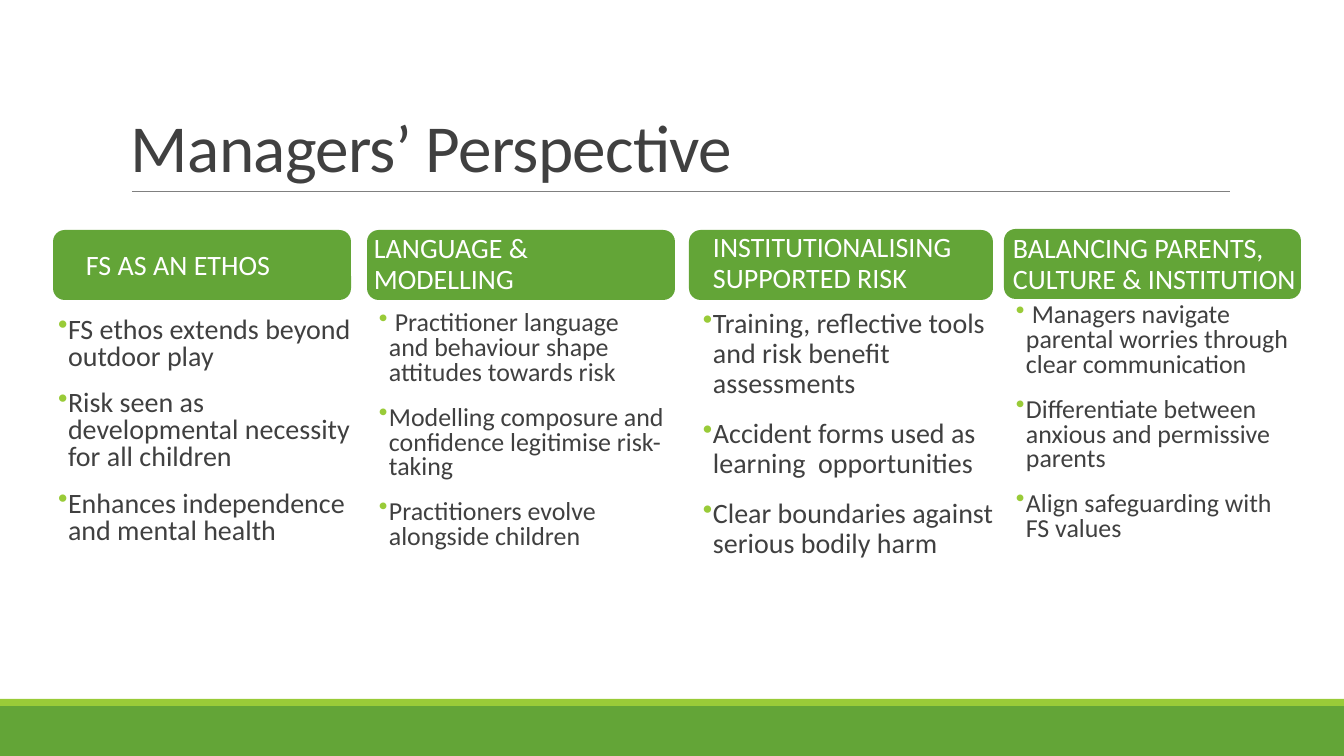
from dataclasses import dataclass
from typing import NamedTuple

from lxml.etree import SubElement
from pptx import Presentation
from pptx.dml.color import RGBColor
from pptx.enum.shapes import MSO_CONNECTOR as Connector, MSO_SHAPE as Shape
from pptx.enum.text import MSO_ANCHOR as Anchor
from pptx.oxml.ns import qn
from pptx.util import Emu, Pt

SLIDE_W, SLIDE_H = 1344, 756
EMU_PER_PX = 914400 / 100.8


def px(length: int) -> Emu:
    return Emu(round(length * EMU_PER_PX))


@dataclass(frozen=True)
class Theme:
    font: str = "Calibri"
    green: str = "63A537"
    lime: str = "99CB38"
    ink: str = "404040"
    rule: str = "808080"
    white: str = "FFFFFF"
    title_size: float = 48
    text_size: float = 20
    small_size: float = 18.5


THEME = Theme()


class Box(NamedTuple):
    left: int
    top: int
    width: int
    height: int

    def emu(self) -> list[Emu]:
        return [px(length) for length in self]


@dataclass(frozen=True)
class Column:
    heading: str
    band: Box
    heading_box: Box
    points_box: Box
    points: tuple[str, ...]
    size: float
    line_spacing: float


COLUMNS = (
    Column("FS AS AN ETHOS", Box(53, 230, 298, 70), Box(76, 225, 321, 82),
           Box(58, 313, 321, 239),
           ("FS ethos extends beyond outdoor play",
            "Risk seen as developmental necessity for all children",
            "Enhances independence and mental health"),
           THEME.text_size, 0.8),
    Column("LANGUAGE & MODELLING", Box(367, 230, 308, 70), Box(364, 224, 310, 82),
           Box(379, 307, 285, 254),
           (" Practitioner language and behaviour shape attitudes towards risk",
            "Modelling composure and confidence legitimise risk-taking",
            "Practitioners evolve alongside children"),
           THEME.small_size, 0.8),
    Column("INSTITUTIONALISING SUPPORTED RISK", Box(689, 230, 304, 70),
           Box(703, 223, 321, 82), Box(703, 304, 295, 263),
           ("Training, reflective tools and risk benefit assessments",
            "Accident forms used as learning  opportunities",
            "Clear boundaries against serious bodily harm"),
           THEME.text_size, 0.9),
    Column("BALANCING PARENTS, CULTURE & INSTITUTION", Box(1004, 229, 297, 70),
           Box(1003, 224, 321, 82), Box(1016, 299, 274, 288),
           (" Managers navigate parental worries through clear communication",
            "Differentiate between anxious and permissive parents",
            "Align safeguarding with FS values"),
           THEME.small_size, 0.8),
)


def apply_format(target, values: dict) -> None:
    for name, value in values.items():
        setattr(target, name, value)


def add_block(slide, kind: Shape, box: Box, color: str) -> None:
    block = slide.shapes.add_shape(kind, *box.emu())
    block.shadow.inherit = False
    block.fill.solid()
    block.fill.fore_color.rgb = RGBColor.from_string(color)
    block.line.fill.background()


def add_rule(slide, left: int, right: int, y: int) -> None:
    rule = slide.shapes.add_connector(
        Connector.STRAIGHT, px(left), px(y), px(right), px(y))
    rule.line.width = Pt(0.5)
    rule.line.color.rgb = RGBColor.from_string(THEME.rule)
    SubElement(rule._element.spPr, qn("a:effectLst"))


def add_bullet(paragraph) -> None:
    properties = paragraph._p.get_or_add_pPr()
    properties.set("marL", str(px(10)))
    properties.set("indent", str(-px(10)))
    bullet_color = SubElement(properties, qn("a:buClr"))
    SubElement(bullet_color, qn("a:srgbClr"), val=THEME.lime)
    SubElement(properties, qn("a:buChar"), char="•")


def add_text(slide, box: Box, lines: tuple[str, ...], size: float, color: str,
             line_spacing: float, anchor: Anchor, inset: int = 10,
             bulleted: bool = False, tracking: int = 0) -> None:
    frame = slide.shapes.add_textbox(*box.emu()).text_frame
    apply_format(frame, {
        "word_wrap": True, "vertical_anchor": anchor,
        "margin_left": px(inset), "margin_right": px(inset),
        "margin_top": px(5), "margin_bottom": px(5),
    })
    for index, line in enumerate(lines):
        paragraph = frame.add_paragraph() if index else frame.paragraphs[0]
        if bulleted:
            add_bullet(paragraph)
        apply_format(paragraph, {
            "line_spacing": line_spacing,
            "space_before": Pt(12 if index else 0),
            "space_after": Pt(2 if bulleted else 0),
        })
        run = paragraph.add_run()
        run.text = line
        apply_format(run.font, {"name": THEME.font, "size": Pt(size)})
        run.font.color.rgb = RGBColor.from_string(color)
        if tracking:
            run._r.get_or_add_rPr().set("spc", str(tracking))


def main() -> None:
    deck = Presentation()
    apply_format(deck, {"slide_width": px(SLIDE_W), "slide_height": px(SLIDE_H)})
    slide = deck.slides.add_slide(deck.slide_layouts[6])

    # Footer stripes and title rule
    add_block(slide, Shape.RECTANGLE, Box(0, 706, SLIDE_W, 50), THEME.green)
    add_block(slide, Shape.RECTANGLE, Box(0, 699, SLIDE_W, 7), THEME.lime)
    add_rule(slide, 132, 1230, 191)

    # Title
    add_text(slide, Box(121, 31, 1109, 160), ("Managers’ Perspective",),
             THEME.title_size, THEME.ink, 0.85, Anchor.BOTTOM, tracking=-50)

    # Four themes: band, heading and points
    for column in COLUMNS:
        add_block(slide, Shape.ROUNDED_RECTANGLE, column.band, THEME.green)
        add_text(slide, column.heading_box, (column.heading,),
                 THEME.text_size, THEME.white, 0.9, Anchor.MIDDLE)
        add_text(slide, column.points_box, column.points, column.size, THEME.ink,
                 column.line_spacing, Anchor.TOP, inset=0, bulleted=True)

    deck.save("out.pptx")


if __name__ == "__main__":
    main()
